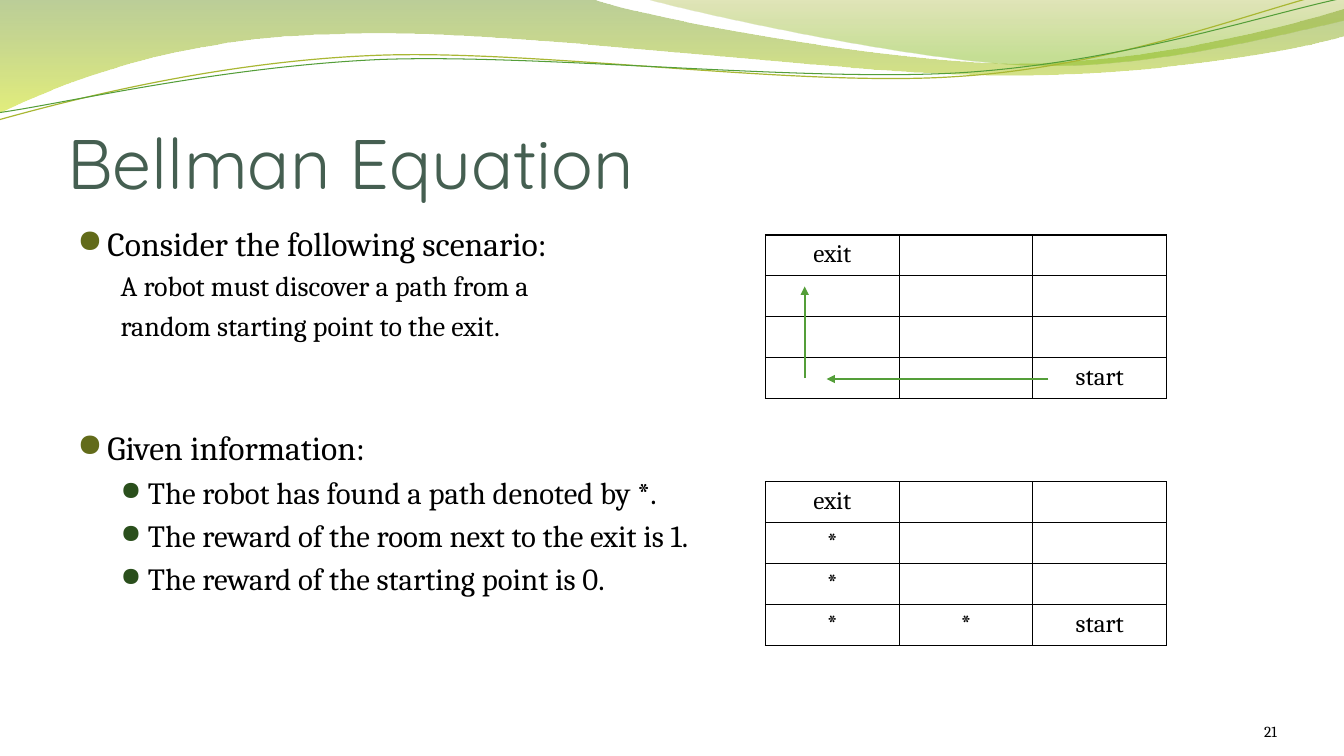
from lxml import etree
from pptx import Presentation
from pptx.dml.color import RGBColor
from pptx.enum.shapes import MSO_CONNECTOR
from pptx.enum.text import MSO_ANCHOR, PP_ALIGN
from pptx.oxml.ns import qn
from pptx.util import Cm, Pt

TOP, BOTTOM = MSO_ANCHOR.TOP, MSO_ANCHOR.BOTTOM
LEFT, CENTER, RIGHT = PP_ALIGN.LEFT, PP_ALIGN.CENTER, PP_ALIGN.RIGHT
STRAIGHT = MSO_CONNECTOR.STRAIGHT
SERIF, SANS, SYMBOL = "Cambria", "Quicksand", "OpenSymbol"
BLACK, GREEN = "000000", "549E39"

# Wave outlines in hundredths of a cm: a pair is a line, six numbers a curve
BANDS = [
    ([(0, 0), (1491, -3),
      (1610, 43, 2245, 160, 2568, 160), (2888, 160, 3244, 66, 3386, 23),
      (3388, 91),
      (3330, 112, 2944, 193, 2525, 190), (2106, 190, 1293, 71, 871, 86),
      (437, 91, 155, 211, -5, 287)],
     [(0, "69921C", 45), (1, "CCE10F", 55)]),
    ([(1621, -3),
      (1725, 28, 2309, 157, 2604, 165), (2896, 175, 3256, 81, 3386, 53),
      (3386, 0)],
     [(0, "9BAA1A", 30), (0.8, "81BA16", 45)]),
]
STRANDS = [
    ([(-3, 302), (160, 257, 533, 157, 937, 140),
      (1339, 122, 2004, 221, 2410, 193), (2819, 168, 3178, 20, 3378, -25)],
     "A9B733", 0.85),
    ([(-3, 284), (157, 262, 554, 168, 958, 150),
      (1364, 135, 2022, 208, 2426, 183), (2830, 157, 3188, 36, 3386, -5)],
     GREEN, 0.75),
]

# Paragraph kinds: size, left margin, first-line indent, bullet colour and size
KINDS = {
    "head": (24, 0.76, -0.76, "626B1A", 95),
    "plain": (20, 1.09, 0, None, None),
    "item": (22, 1.78, -0.69, "2A4F1C", 85),
}
BODY = [
    ("head", "Consider the following scenario:", None),
    ("plain", "A robot must discover a path from a", None),
    ("plain", "random starting point to the exit.", None),
    ("head", "Given information:", 61),
    ("item", "The robot has found a path denoted by *.", None),
    ("item", "The reward of the room next to the exit is 1.", None),
    ("item", "The reward of the starting point is 0.", None),
]
ROUTE = [["exit", "", ""], ["", "", ""], ["", "", ""], ["", "", "start"]]
FOUND = [["exit", "", ""], ["*", "", ""], ["*", "", ""], ["*", "*", "start"]]


def rgb(code):
    return RGBColor.from_string(code)


def sub(parent, tag, **attrs):
    node = etree.SubElement(parent, qn(tag))
    for key, value in attrs.items():
        node.set(key, str(value))
    return node


def style(para, size, font=SERIF, color=BLACK, align=LEFT):
    para.alignment = align
    para.font.size, para.font.name = Pt(size), font
    para.font.color.rgb = rgb(color)


def outline(slide, x, y, steps, close):
    points = [step[i:i + 2] for step in steps for i in range(0, len(step), 2)]
    pen = slide.shapes.build_freeform(*points[0], scale=Cm(0.01))
    pen.add_line_segments(points[1:], close=close)
    shape = pen.convert_to_shape(Cm(x), Cm(y))
    shape.shadow.inherit = False
    # Join each three points of a curve into one segment
    lines = iter(list(shape.element.spPr.iter(qn("a:lnTo"))))
    for step in steps[1:]:
        first = next(lines)
        if len(step) == 6:
            curve = etree.Element(qn("a:cubicBezTo"))
            first.addprevious(curve)
            for line in (first, next(lines), next(lines)):
                curve.append(line[0])
                line.getparent().remove(line)
    return shape


def waves(slide, x, y):
    # Shaded bands
    for steps, stops in BANDS:
        band = outline(slide, x, y, steps, True)
        band.line.fill.background()
        band.fill.gradient()
        band.fill.gradient_angle = 270
        for stop, (place, color, _) in zip(band.fill.gradient_stops, stops):
            stop.position, stop.color.rgb = place, rgb(color)
        tints = band.element.spPr.iter(qn("a:srgbClr"))
        for tint, (_, _, alpha) in zip(tints, stops):
            sub(tint, "a:alpha", val=alpha * 1000)
    # Thin strands
    for steps, color, width in STRANDS:
        strand = outline(slide, x, y, steps, False)
        strand.fill.background()
        strand.line.color.rgb, strand.line.width = rgb(color), Pt(width)


def textbox(slide, x, y, w, h, anchor, pads):
    frame = slide.shapes.add_textbox(Cm(x), Cm(y), Cm(w), Cm(h)).text_frame
    frame.word_wrap, frame.vertical_anchor = True, anchor
    frame.margin_left = frame.margin_right = Cm(pads[0])
    frame.margin_top, frame.margin_bottom = Cm(pads[1]), Cm(pads[2])
    return frame


def label(slide, x, y, w, h, text, top=0, **look):
    para = textbox(slide, x, y, w, h, BOTTOM, (0, top, 0)).paragraphs[0]
    para.text = text
    style(para, **look)


def body(slide, x, y, w, h):
    frame = textbox(slide, x, y, w, h, TOP, (0.25, 0.13, 0.13))
    for i, (kind, text, gap) in enumerate(BODY):
        para = frame.add_paragraph() if i else frame.paragraphs[0]
        size, left, indent, color, scale = KINDS[kind]
        para.text = text
        style(para, size)
        props = para._p.get_or_add_pPr()
        props.set("marL", str(Cm(left)))
        props.set("indent", str(Cm(indent)))
        # Spacing and bullet come before the font settings
        parts = etree.Element("parts")
        if gap is None:
            sub(sub(parts, "a:spcBef"), "a:spcPct", val=20000)
        else:
            sub(sub(parts, "a:spcBef"), "a:spcPts", val=gap * 100)
        if color:
            sub(sub(parts, "a:buClr"), "a:srgbClr", val=color)
            sub(parts, "a:buSzPct", val=scale * 1000)
            sub(parts, "a:buFont", typeface=SYMBOL)
            sub(parts, "a:buChar", char="●")
        else:
            sub(parts, "a:buNone")
        for place, part in enumerate(list(parts)):
            props.insert(place, part)


def grid(slide, x, y, w, h, rows):
    frame = slide.shapes.add_table(len(rows), len(rows[0]),
                                   Cm(x), Cm(y), Cm(w), Cm(h))
    table = frame.table
    table.first_row = table.horz_banding = False
    for r, row in enumerate(rows):
        for c, text in enumerate(row):
            cell = table.cell(r, c)
            cell.margin_top, cell.margin_bottom = Cm(0.13), 0
            para = cell.text_frame.paragraphs[0]
            para.text = text
            style(para, 18, align=CENTER)
            props = cell._tc.get_or_add_tcPr()
            for side in ("a:lnL", "a:lnR", "a:lnT", "a:lnB"):
                edge = sub(props, side, w=Pt(1))
                sub(sub(edge, "a:solidFill"), "a:srgbClr", val=BLACK)
            cell.fill.background()


def arrow(slide, x, y, dx, dy):
    line = slide.shapes.add_connector(STRAIGHT, Cm(x), Cm(y),
                                      Cm(x + dx), Cm(y + dy))
    line.line.color.rgb, line.line.width = rgb(GREEN), Pt(1.5)
    sub(line.line._get_or_add_ln(), "a:tailEnd", type="triangle")
    sub(line._element.spPr, "a:effectLst")


def maze(slide, x, y, w, h):
    grid(slide, x, y, w, h, ROUTE)
    arrow(slide, x + 7.13, y + 3.63, -5.59, 0)
    arrow(slide, x + 0.99, y + 3.61, 0, -2.31)


def main():
    deck = Presentation()
    deck.slide_width, deck.slide_height = Cm(33.87), Cm(19.05)
    slide = deck.slides.add_slide(deck.slide_layouts[6])
    waves(slide, 0, 0)
    label(slide, 1.7, 1.96, 30.48, 3.18, "Bellman Equation", top=0.13,
          size=50, font=SANS, color="455F51")
    body(slide, 1.7, 5.49, 30.48, 12.19)
    maze(slide, 19.29, 5.92, 10.11, 4.12)
    grid(slide, 19.29, 12.14, 10.11, 4.12, FOUND)
    label(slide, 29.36, 17.65, 2.82, 1.02, "21", size=11, align=RIGHT)
    deck.save("out.pptx")


if __name__ == "__main__":
    main()
